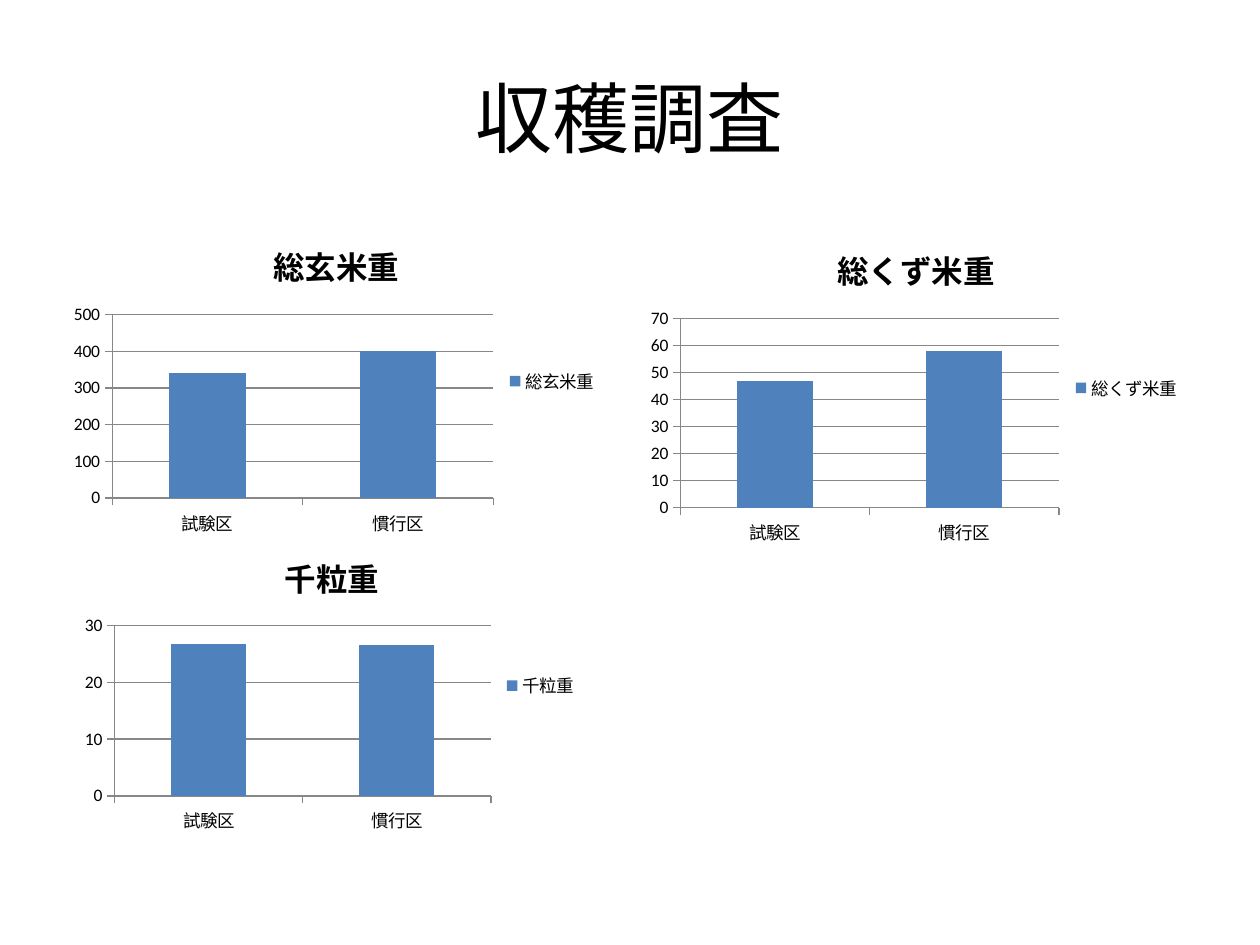
from dataclasses import dataclass

from lxml import etree
from pptx import Presentation
from pptx.chart.data import CategoryChartData
from pptx.dml.color import RGBColor
from pptx.enum.chart import XL_CHART_TYPE, XL_LEGEND_POSITION, XL_TICK_MARK
from pptx.enum.lang import MSO_LANGUAGE_ID
from pptx.enum.text import MSO_ANCHOR, PP_ALIGN
from pptx.oxml.ns import qn
from pptx.util import Pt

COLUMN = XL_CHART_TYPE.COLUMN_CLUSTERED
LEGEND_RIGHT = XL_LEGEND_POSITION.RIGHT
TICK_OUT = XL_TICK_MARK.OUTSIDE
JAPANESE = MSO_LANGUAGE_ID.JAPANESE
CENTER = PP_ALIGN.CENTER
MIDDLE = MSO_ANCHOR.MIDDLE


@dataclass(frozen=True)
class Theme:
    ink: RGBColor = RGBColor(0x00, 0x00, 0x00)
    bar: RGBColor = RGBColor(0x4F, 0x81, 0xBD)
    rule: RGBColor = RGBColor(0x87, 0x87, 0x87)
    title_font: str = "Noto Sans CJK JP"
    chart_font: str = "Calibri"
    title_size: int = 44
    chart_title_size: int = 18
    label_size: int = 10
    rule_width: float = 0.75


THEME = Theme()
PLOTS = ["試験区", "慣行区"]
CHARTS = [
    ("総玄米重", (340, 400), (36, 126, 312.5, 183.6), (500, 100)),
    ("総くず米重", (47, 58), (365.6, 128.1, 316, 187.2), (70, 10)),
    ("千粒重", (26.8, 26.6), (42.6, 304, 294.5, 175.7), (30, 10)),
]


def write_text(tf, text, font, size, bold=False, align=CENTER):
    p = tf.paragraphs[0]
    p.alignment = align
    r = p.add_run()
    r.text = text
    r.font.name = font
    r.font.size = Pt(size)
    r.font.bold = bold
    r.font.language_id = JAPANESE
    r.font.color.rgb = THEME.ink
    ea = etree.SubElement(r.font._element, qn("a:ea"))
    ea.set("typeface", THEME.title_font)


def add_title(s, text, box):
    tf = s.shapes.add_textbox(*map(Pt, box)).text_frame
    tf.word_wrap = True
    tf.vertical_anchor = MIDDLE
    write_text(tf, text, font=THEME.title_font, size=THEME.title_size)


def style_line(line):
    line.color.rgb = THEME.rule
    line.width = Pt(THEME.rule_width)


def add_yield_chart(s, name, values, box, scale):
    data = CategoryChartData()
    data.categories = PLOTS
    data.add_series(name, values)
    chart = s.shapes.add_chart(COLUMN, *map(Pt, box), data).chart

    chart.font.name = THEME.chart_font
    chart.font.size = Pt(THEME.label_size)
    chart.font.color.rgb = THEME.ink
    chart.has_title = True
    write_text(chart.chart_title.text_frame, name, font=THEME.chart_font,
               size=THEME.chart_title_size, bold=True)
    chart.chart_title.include_in_layout = False
    chart.has_legend = True
    chart.legend.position = LEGEND_RIGHT
    chart.legend.include_in_layout = False

    plot = chart.plots[0]
    plot.gap_width = 150
    plot.vary_by_categories = False
    fill = plot.series[0].format.fill
    fill.solid()
    fill.fore_color.rgb = THEME.bar

    for axis in (chart.category_axis, chart.value_axis):
        axis.major_tick_mark = TICK_OUT
        style_line(axis.format.line)
    axis = chart.value_axis
    axis.minimum_scale = 0
    axis.maximum_scale, axis.major_unit = scale
    axis.has_major_gridlines = True
    style_line(axis.major_gridlines.format.line)


def main():
    prs = Presentation()
    prs.slide_width, prs.slide_height = Pt(720), Pt(540)
    s = prs.slides.add_slide(prs.slide_layouts[6])
    add_title(s, "収穫調査", (36, 21.6, 648, 90))
    for name, values, box, scale in CHARTS:
        add_yield_chart(s, name, values, box, scale)
    prs.save("out.pptx")


if __name__ == "__main__":
    main()
